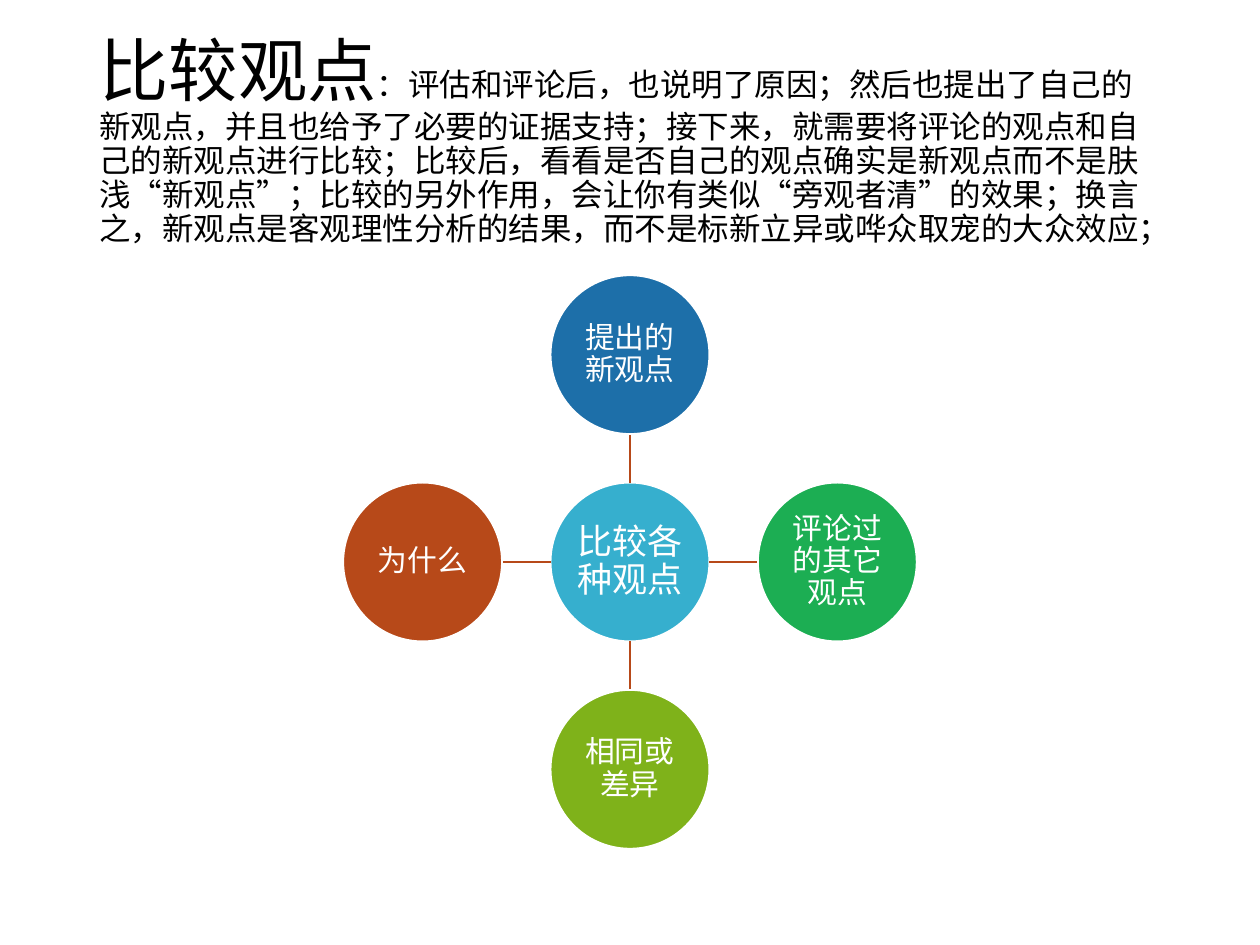
from pptx import Presentation
from pptx import util as u
from pptx.dml.color import RGBColor
from pptx.enum import lang, shapes, text
from pptx.oxml import parse_xml
from pptx.oxml.ns import nsdecls

FONT = {"name": "Times New Roman", "language_id": lang.MSO_LANGUAGE_ID.SIMPLIFIED_CHINESE}
DIAMETER = 3.2
HEADING = "比较观点"
EXPLANATION = (
    "：评估和评论后，也说明了原因；然后也提出了自己的新观点，并且也给予了必要的证据支持；"
    "接下来，就需要将评论的观点和自己的新观点进行比较；"
    "比较后，看看是否自己的观点确实是新观点而不是肤浅“新观点”；"
    "比较的另外作用，会让你有类似“旁观者清”的效果；"
    "换言之，新观点是客观理性分析的结果，而不是标新立异或哗众取宠的大众效应；"
)
CENTRE = ("比较各种观点", "36AFCE")
SATELLITES = [
    ("提出的新观点", "1D6FA9", 0, -1),
    ("评论过的其它观点", "1CAE53", 1, 0),
    ("相同或差异", "7FB21A", 0, 1),
    ("为什么", "B74919", -1, 0),
]


def colour(value):
    """Turn a hex string into a colour."""
    return RGBColor.from_string(value)


def apply(target, values):
    """Set each named attribute on the target."""
    for name, value in values.items():
        setattr(target, name, value)


def add_span(para, words, size, shade):
    """Append a formatted run to a paragraph."""
    span = para.add_run()
    span.text = words
    apply(span.font, {**FONT, "size": u.Pt(size)})
    span.font.color.rgb = colour(shade)


def add_title(page, left, top, width, height):
    """Place the large heading with its explanation in the title placeholder."""
    title = page.shapes.title
    apply(title, {"left": u.Cm(left), "top": u.Cm(top),
                  "width": u.Cm(width), "height": u.Cm(height)})
    apply(title.text_frame, {"word_wrap": True, "auto_size": text.MSO_AUTO_SIZE.NONE,
                             "vertical_anchor": text.MSO_ANCHOR.MIDDLE})
    para = title.text_frame.paragraphs[0]
    apply(para, {"alignment": text.PP_ALIGN.LEFT, "line_spacing": 0.9})
    add_span(para, HEADING, 39.6, "000000")
    add_span(para, EXPLANATION, 18, "000000")


def add_circle(page, x, y, words, shade, size):
    """Draw a labelled circle centred on a point."""
    circle = page.shapes.add_shape(
        shapes.MSO_SHAPE.OVAL, u.Cm(x - DIAMETER / 2), u.Cm(y - DIAMETER / 2),
        u.Cm(DIAMETER), u.Cm(DIAMETER))
    circle.shadow.inherit = False
    circle.fill.solid()
    circle.fill.fore_color.rgb = colour(shade)
    circle.line.color.rgb = colour("FFFFFF")
    circle.line.width = u.Pt(1)
    frame = circle.text_frame
    apply(frame, {"word_wrap": True, "vertical_anchor": text.MSO_ANCHOR.MIDDLE})
    apply(frame, {f"margin_{side}": u.Cm(0.03) for side in ("left", "top", "right", "bottom")})
    para = frame.paragraphs[0]
    apply(para, {"alignment": text.PP_ALIGN.CENTER, "line_spacing": 0.9})
    add_span(para, words, size, "FFFFFF")


def add_spoke(page, start, end):
    """Draw a straight line between two points."""
    spoke = page.shapes.add_connector(
        shapes.MSO_CONNECTOR.STRAIGHT, *(u.Cm(value) for value in (*start, *end)))
    spoke.line.color.rgb = colour("B74919")
    spoke.line.width = u.Pt(1)
    spoke.element.spPr.append(parse_xml(f"<a:effectLst {nsdecls('a')}/>"))


def add_radial(page, left, top, side):
    """Fill a square box with a central circle and its four satellites."""
    x, y = left + side / 2, top + side / 2
    near, pitch = DIAMETER / 2, (side - DIAMETER) / 2
    far = pitch - near
    add_circle(page, x, y, *CENTRE, 20)
    for words, shade, across, down in SATELLITES:
        add_spoke(page, (x + across * near, y + down * near),
                  (x + across * far, y + down * far))
        add_circle(page, x + across * pitch, y + down * pitch, words, shade, 17)


def main():
    """Build and save the slide."""
    deck = Presentation()
    apply(deck, {"slide_width": u.Cm(25.4), "slide_height": u.Cm(19.05)})
    page = deck.slides.add_slide(deck.slide_layouts[5])
    add_title(page, 1.75, 1.02, 21.9, 3.68)
    add_radial(page, 6.92, 5.55, 11.56)
    deck.save("out.pptx")


if __name__ == "__main__":
    main()
